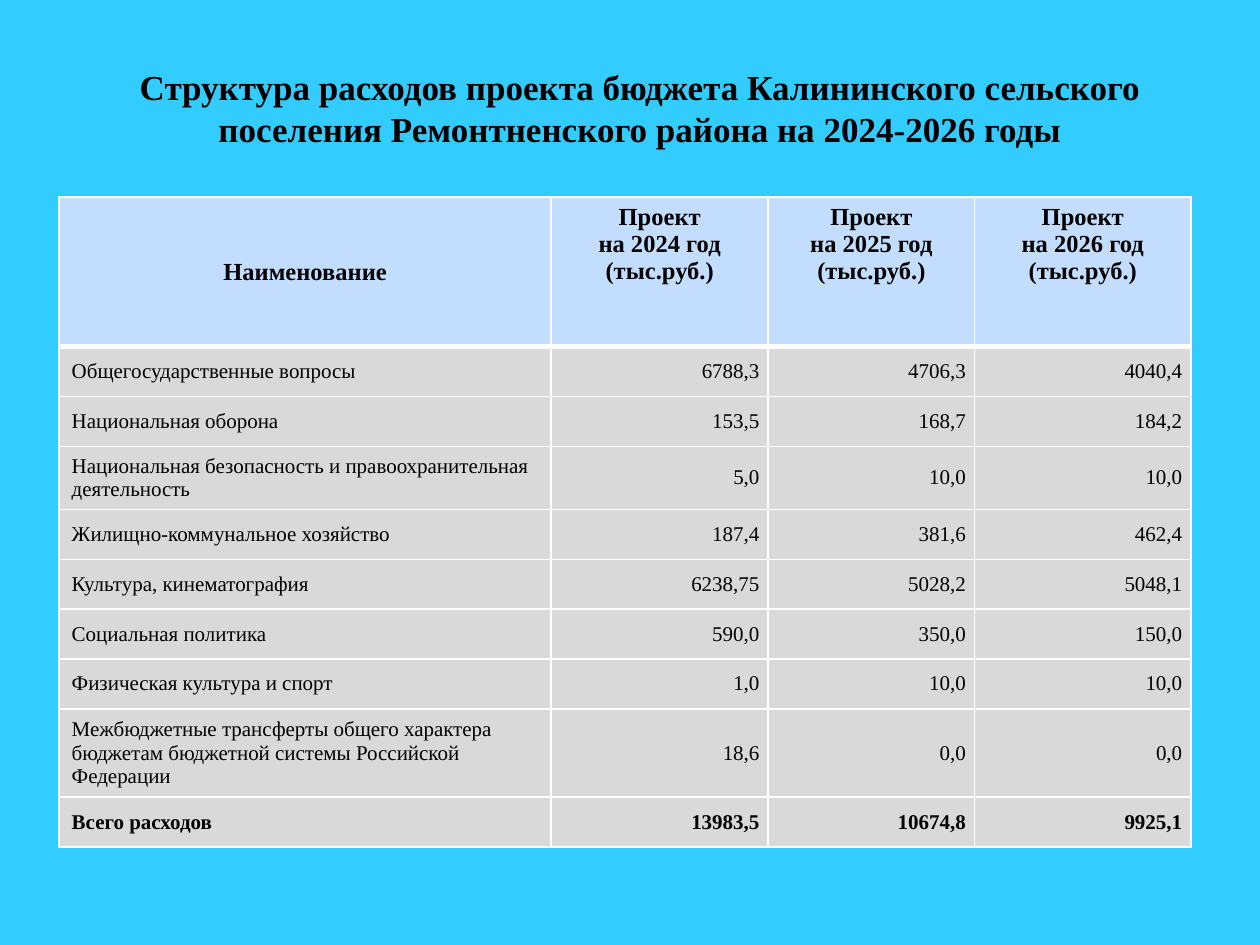
from dataclasses import dataclass

from lxml.etree import SubElement
from pptx import Presentation
from pptx.dml.color import RGBColor as Color
from pptx.enum.text import MSO_ANCHOR as Anchor, MSO_AUTO_SIZE as AutoSize, PP_ALIGN as Align
from pptx.oxml.ns import qn
from pptx.util import Pt

TITLE = ("Структура расходов проекта бюджета Калининского сельского "
         "поселения Ремонтненского района на 2024-2026 годы")
YEARS = (2024, 2025, 2026)
EXPENSES = [
    ("Общегосударственные вопросы", "6788,3", "4706,3", "4040,4"),
    ("Национальная оборона", "153,5", "168,7", "184,2"),
    ("Национальная безопасность и правоохранительная деятельность", "5,0", "10,0", "10,0"),
    ("Жилищно-коммунальное хозяйство", "187,4", "381,6", "462,4"),
    ("Культура, кинематография", "6238,75", "5028,2", "5048,1"),
    ("Социальная политика", "590,0", "350,0", "150,0"),
    ("Физическая культура и спорт", "1,0", "10,0", "10,0"),
    ("Межбюджетные трансферты общего характера бюджетам бюджетной системы "
     "Российской Федерации", "18,6", "0,0", "0,0"),
    ("Всего расходов", "13983,5", "10674,8", "9925,1"),
]
COLUMN_WIDTHS = (281.2, 124, 118, 123.6)
HEADER_HEIGHT, ROW_HEIGHT = 85.6, 28.5
TALL_ROWS = {3: 36, 8: 50.2}


@dataclass(frozen=True)
class Theme:
    font: str = "Times New Roman"
    background: str = "33CCFF"
    text: str = "000000"
    header: str = "C3DDFF"
    body: str = "D9D9D9"
    border: str = "FFFFFF"
    title_size: float = 20
    header_size: float = 14
    body_size: float = 12
    thin: float = 1
    thick: float = 3


def write_text(frame, text, *, theme, size, bold=False, align=Align.LEFT, anchor=Anchor.MIDDLE,
               insets=(7.2, 3.6)):
    """Fill a text frame or table cell with one paragraph per line of text."""
    frame.margin_left = frame.margin_right = Pt(insets[0])
    frame.margin_top = frame.margin_bottom = Pt(insets[1])
    frame.vertical_anchor = anchor
    body = getattr(frame, "text_frame", frame)
    body.word_wrap = True
    for index, line in enumerate(text.split("\n")):
        paragraph = body.add_paragraph() if index else body.paragraphs[0]
        paragraph.alignment = align
        run = paragraph.add_run()
        run.text = line
        run.font.name, run.font.size, run.font.bold = theme.font, Pt(size), bold
        run.font.color.rgb = Color.from_string(theme.text)


class SlideBuilder:
    """Hold the theme and the current slide and add elements to it."""

    def __init__(self, presentation, theme):
        """Add a title-only slide with the theme background."""
        self.theme = theme
        self.slide = presentation.slides.add_slide(presentation.slide_layouts[5])
        self.slide.background.fill.solid()
        self.slide.background.fill.fore_color.rgb = Color.from_string(theme.background)

    def title(self, text, left, top, width, height):
        """Place and format the title placeholder."""
        shape = self.slide.shapes.title
        shape.left, shape.top, shape.width, shape.height = map(Pt, (left, top, width, height))
        write_text(shape.text_frame, text, theme=self.theme, size=self.theme.title_size,
                   bold=True, align=Align.CENTER, anchor=Anchor.TOP)
        shape.text_frame.auto_size = AutoSize.SHAPE_TO_FIT_TEXT

    def table(self, rows, left, top, widths, heights):
        """Add a table with a header row and a bold total row."""
        shape = self.slide.shapes.add_table(len(rows), len(widths), Pt(left), Pt(top),
                                            Pt(sum(widths)), Pt(sum(heights)))
        table = shape.table
        for column, width in zip(table.columns, widths):
            column.width = Pt(width)
        for row, height in zip(table.rows, heights):
            row.height = Pt(height)
        for row_index, values in enumerate(rows):
            for column_index, text in enumerate(values):
                cell = table.cell(row_index, column_index)
                self.cell_style(cell, row_index)
                self.cell_text(cell, text, header=row_index == 0, label=column_index == 0,
                               total=row_index == len(rows) - 1)

    def cell_text(self, cell, text, *, header, label, total):
        """Write a header, a row label or an amount."""
        theme = self.theme
        if header:
            write_text(cell, text, theme=theme, size=theme.header_size, bold=True,
                       align=Align.CENTER, anchor=Anchor.MIDDLE if label else Anchor.TOP)
        elif label:
            write_text(cell, text, theme=theme, size=theme.body_size, bold=total)
        else:
            write_text(cell, text, theme=theme, size=theme.body_size, bold=total,
                       align=Align.RIGHT, insets=(5, 0))

    def cell_style(self, cell, row_index):
        """Set the borders and the fill of a table cell."""
        theme = self.theme
        thick_side = {0: "B", 1: "T"}.get(row_index)
        properties = cell._tc.get_or_add_tcPr()
        for side in "LRTB":
            width = theme.thick if side == thick_side else theme.thin
            line = SubElement(properties, qn(f"a:ln{side}"), w=str(Pt(width)))
            SubElement(SubElement(line, qn("a:solidFill")), qn("a:srgbClr"), val=theme.border)
        cell.fill.solid()
        cell.fill.fore_color.rgb = Color.from_string(theme.body if row_index else theme.header)


def main():
    """Build and save the budget expense slide."""
    presentation = Presentation()
    presentation.slide_width, presentation.slide_height = Pt(720), Pt(540)
    builder = SlideBuilder(presentation, Theme())
    builder.title(TITLE, 33.8, 33.8, 663.8, 55.4)
    header = ("Наименование", *(f"Проект\nна {year} год\n(тыс.руб.)" for year in YEARS))
    heights = [HEADER_HEIGHT] + [TALL_ROWS.get(number, ROW_HEIGHT)
                                 for number in range(1, len(EXPENSES) + 1)]
    builder.table([header, *EXPENSES], 33.8, 112.5, COLUMN_WIDTHS, heights)
    presentation.save("out.pptx")


if __name__ == "__main__":
    main()
